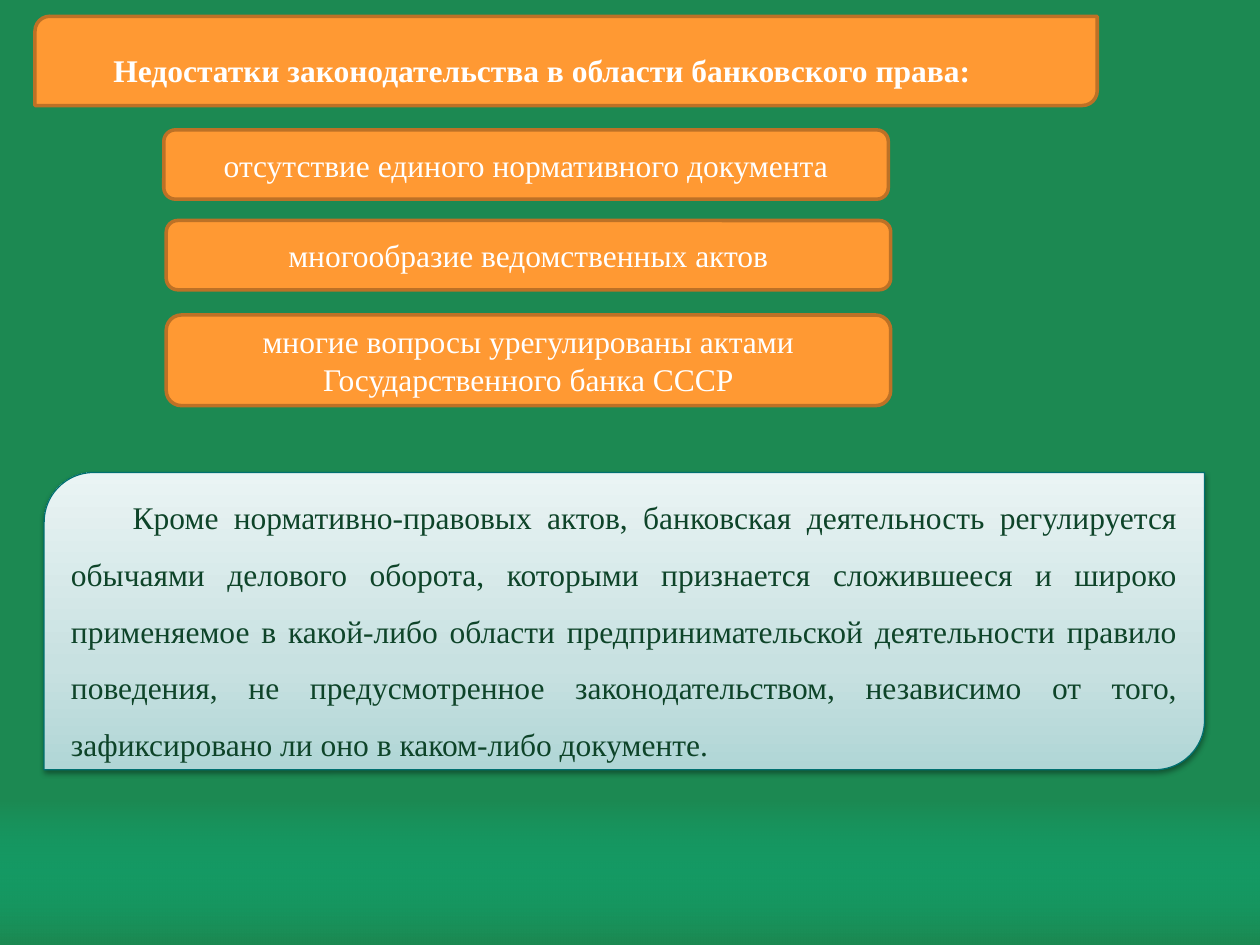
from lxml.etree import SubElement
from pptx import Presentation
from pptx.dml.color import RGBColor
from pptx.enum.shapes import MSO_SHAPE
from pptx.enum.text import MSO_ANCHOR, PP_ALIGN
from pptx.oxml.ns import qn
from pptx.util import Pt

COLORS = {
    "page": "1C8952",
    "glow": "00CC99",
    "orange": "FF9933",
    "rust": "BD7126",
    "white": "FFFFFF",
    "mist_dark": "B0D6D6",
    "mist": "C8E1E1",
    "mist_light": "EAF4F4",
    "teal": "007070",
    "ink": "0E4429",
    "black": "000000",
}
CENTERED = {"alignment": PP_ALIGN.CENTER}
JUSTIFIED = {"alignment": PP_ALIGN.JUSTIFY, "line_spacing": 1.5}
FIRST_LINE_INDENT = Pt(35.3)

TITLE = "Недостатки законодательства в области банковского права:"
DRAWBACKS = [
    ("отсутствие единого нормативного документа", (93.6, 74.2, 414, 39.6)),
    ("многообразие ведомственных актов", (95, 126, 414, 39.6)),
    ("многие вопросы урегулированы актами Государственного банка СССР",
     (95, 180, 414, 51.8)),
]
CUSTOMS = (
    "Кроме нормативно-правовых актов, банковская деятельность регулируется "
    "обычаями делового оборота, которыми признается сложившееся и широко "
    "применяемое в какой-либо области предпринимательской деятельности правило "
    "поведения, не предусмотренное законодательством, независимо от того, "
    "зафиксировано ли оно в каком-либо документе."
)


def rgb(name):
    return RGBColor.from_string(COLORS[name])


def apply_format(target, values):
    for name, value in values.items():
        setattr(target, name, value)


def add_color(parent, name, alpha=100):
    color = SubElement(parent, qn("a:srgbClr"), val=COLORS[name])
    if alpha < 100:
        SubElement(color, qn("a:alpha"), val=str(alpha * 1000))


def add_panel(page, kind, frame, line=None, width=0):
    panel = page.shapes.add_shape(kind, *map(Pt, frame))
    panel.shadow.inherit = False
    if line:
        panel.line.color.rgb = rgb(line)
        panel.line.width = Pt(width)
    else:
        panel.line.fill.background()
    return panel


def fill_solid(panel, name):
    panel.fill.solid()
    panel.fill.fore_color.rgb = rgb(name)


def fill_gradient(panel, stops, angle):
    panel.fill.background()
    properties = panel._element.spPr
    empty_fill = properties.find(qn("a:noFill"))
    gradient = SubElement(properties, qn("a:gradFill"), rotWithShape="1")
    properties.replace(empty_fill, gradient)
    stop_list = SubElement(gradient, qn("a:gsLst"))
    for position, name, alpha in stops:
        stop = SubElement(stop_list, qn("a:gs"), pos=str(position * 1000))
        add_color(stop, name, alpha)
    SubElement(gradient, qn("a:lin"), ang=str(angle * 60000), scaled="0")


def add_shadow(panel, name, alpha, blur, distance, angle):
    effects = panel._element.spPr.find(qn("a:effectLst"))
    shadow = SubElement(
        effects, qn("a:outerShdw"), blurRad=str(Pt(blur)), dist=str(Pt(distance)),
        dir=str(angle * 60000), rotWithShape="0",
    )
    add_color(shadow, name, alpha)


def write_text(panel, text, layout, color="white", bold=False, indent=0):
    frame = panel.text_frame
    apply_format(frame, {"word_wrap": True, "vertical_anchor": MSO_ANCHOR.MIDDLE})
    para = frame.paragraphs[0]
    apply_format(para, layout)
    if indent:
        para._p.get_or_add_pPr().set("indent", str(indent))
    span = para.add_run()
    span.text = text
    apply_format(span.font, {"name": "Times New Roman", "size": Pt(18), "bold": bold})
    span.font.color.rgb = rgb(color)


def add_orange_panel(page, kind, frame, text, layout, **text_format):
    panel = add_panel(page, kind, frame, "rust", 2)
    fill_solid(panel, "orange")
    write_text(panel, text, layout, **text_format)


def add_customs_panel(page):
    panel = add_panel(page, MSO_SHAPE.ROUND_2_DIAG_RECTANGLE,
                      (25.2, 270, 663.1, 169.9), "teal", 0.75)
    stops = [(0, "mist_dark", 100), (35, "mist", 100), (100, "mist_light", 100)]
    fill_gradient(panel, stops, 270)
    add_shadow(panel, "black", 38, 3.1, 1.6, 90)
    write_text(panel, CUSTOMS, JUSTIFIED, color="ink", indent=FIRST_LINE_INDENT)


def main():
    deck = Presentation()
    apply_format(deck, {"slide_width": Pt(720), "slide_height": Pt(540)})
    page = deck.slides.add_slide(deck.slide_layouts[6])
    page.background.fill.solid()
    page.background.fill.fore_color.rgb = rgb("page")

    band = add_panel(page, MSO_SHAPE.RECTANGLE, (0, 457.2, 720, 82.8))
    fill_gradient(band, [(0, "glow", 0), (100, "page", 100)], 90)

    add_orange_panel(page, MSO_SHAPE.ROUND_2_DIAG_RECTANGLE, (20, 9.3, 607, 51),
                     TITLE, JUSTIFIED, bold=True, indent=FIRST_LINE_INDENT)
    for text, frame in DRAWBACKS:
        add_orange_panel(page, MSO_SHAPE.ROUNDED_RECTANGLE, frame, text, CENTERED)
    add_customs_panel(page)
    deck.save("out.pptx")


if __name__ == "__main__":
    main()
